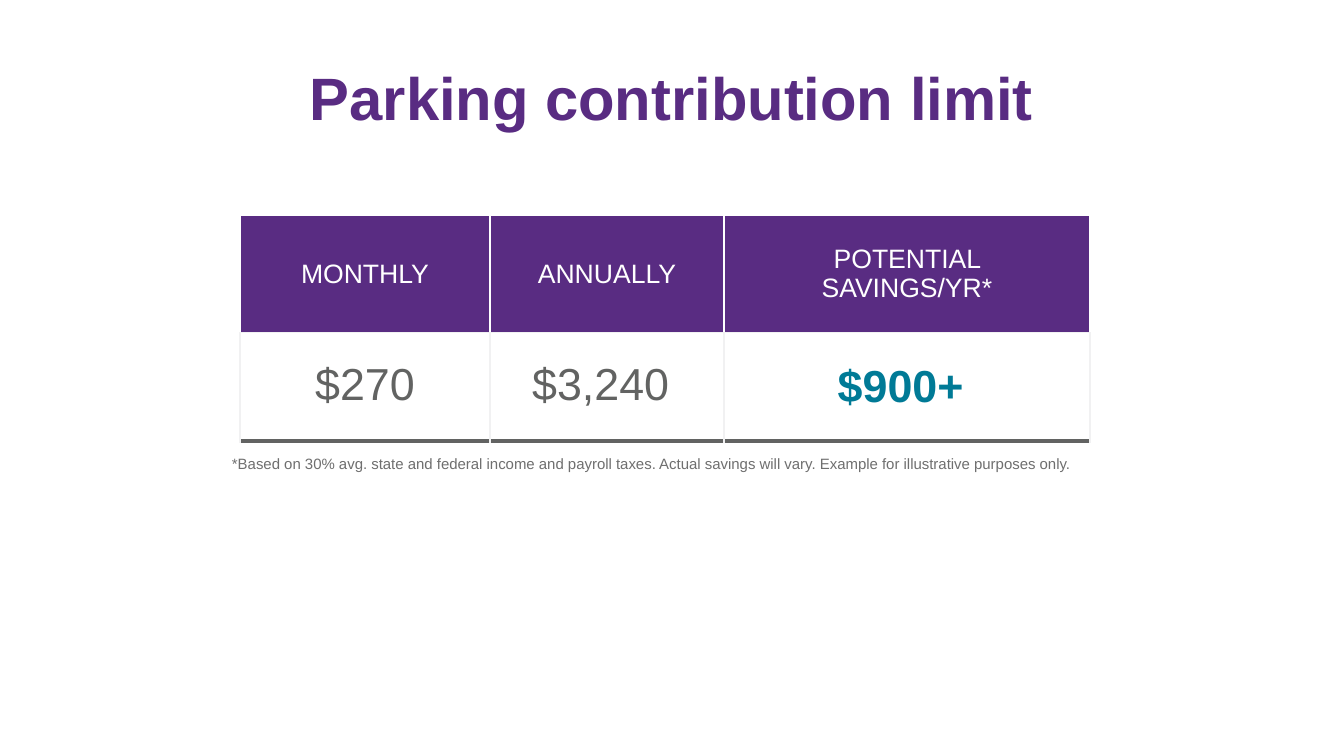
"""Build the parking contribution limit slide."""
import pptx
import pptx.dml.color
import pptx.enum.text
import pptx.oxml
import pptx.oxml.ns
import pptx.util

RGBColor = pptx.dml.color.RGBColor
PURPLE = RGBColor(0x59, 0x2C, 0x82)
WHITE = RGBColor(0xFF, 0xFF, 0xFF)
PALE = RGBColor(0xF1, 0xF1, 0xF2)
GREY = RGBColor(0x62, 0x63, 0x62)
TEAL = RGBColor(0x00, 0x7A, 0x96)
NOTE_GREY = RGBColor(0x6F, 0x6F, 0x6F)

ALIGN = pptx.enum.text.PP_ALIGN
ANCHOR = pptx.enum.text.MSO_ANCHOR

TITLE = "Parking contribution limit"
NOTE = ("*Based on 30% avg. state and federal income and payroll taxes. "
        "Actual savings will vary. Example for illustrative purposes only.")
HEADER = {"size": 19, "color": WHITE}
AMOUNT = {"size": 32, "color": GREY}
SAVING = {"size": 32, "color": TEAL, "bold": True}
ROWS = [
    [("MONTHLY", HEADER, ANCHOR.MIDDLE), ("ANNUALLY", HEADER, ANCHOR.MIDDLE),
     ("POTENTIAL SAVINGS/YR*", HEADER, ANCHOR.MIDDLE)],
    [("$270", AMOUNT, ANCHOR.TOP), ("$3,240 ", AMOUNT, ANCHOR.TOP),
     ("$900+ ", SAVING, ANCHOR.MIDDLE)],
]
BORDERS = [
    {"L": (WHITE, 1), "R": (WHITE, 1), "T": (WHITE, 1), "B": (PALE, 1)},
    {"L": (PALE, 1), "R": (PALE, 1), "T": (PALE, 1), "B": (GREY, 3)},
]
FILLS = [PURPLE, None]
COLUMN_WIDTHS = [250, 234, 366]
ROW_HEIGHTS = [117, 108]
TABLE_LEFT, TABLE_TOP = 240, 215
CELL_MARGIN = 27
SIDES = ("left", "top", "right", "bottom")


def px(length):
    return pptx.util.Emu(round(length * 914400 / 100.8))


def write(frame, text, size, color, bold=False, align=ALIGN.LEFT):
    para = frame.paragraphs[0]
    para.alignment = align
    span = para.add_run()
    span.text = text
    span.font.color.rgb = color
    style = {"name": "Arial", "size": pptx.util.Pt(size), "bold": bold}
    for name, value in style.items():
        setattr(span.font, name, value)


def add_text(page, area, margins, text, **style):
    box = page.shapes.add_textbox(*map(px, area))
    frame = box.text_frame
    frame.word_wrap = True
    frame.vertical_anchor = ANCHOR.TOP
    for side, margin in zip(SIDES, margins):
        setattr(frame, f"margin_{side}", px(margin))
    write(frame, text, **style)


def set_borders(cell, borders):
    properties = cell._tc.get_or_add_tcPr()
    namespace = pptx.oxml.ns.nsdecls("a")
    for position, (side, (color, points)) in enumerate(borders.items()):
        line = pptx.oxml.parse_xml(
            f'<a:ln{side} {namespace} w="{pptx.util.Pt(points)}"><a:solidFill>'
            f'<a:srgbClr val="{color}"/></a:solidFill></a:ln{side}>')
        properties.insert(position, line)


def add_limits(page):
    area = (TABLE_LEFT, TABLE_TOP, sum(COLUMN_WIDTHS), sum(ROW_HEIGHTS))
    table = page.shapes.add_table(
        len(ROWS), len(COLUMN_WIDTHS), *map(px, area)).table
    table.horz_banding = False
    for column, width in zip(table.columns, COLUMN_WIDTHS):
        column.width = px(width)
    for row, height in zip(table.rows, ROW_HEIGHTS):
        row.height = px(height)
    for row, entries, fill, borders in zip(table.rows, ROWS, FILLS, BORDERS):
        for cell, (text, style, anchor) in zip(row.cells, entries):
            cell.vertical_anchor = anchor
            for side in SIDES:
                setattr(cell, f"margin_{side}", px(CELL_MARGIN))
            if fill is None:
                cell.fill.background()
            else:
                cell.fill.solid()
                cell.fill.fore_color.rgb = fill
            set_borders(cell, borders)
            write(cell.text_frame, text, align=ALIGN.CENTER, **style)


def main():
    deck = pptx.Presentation()
    deck.slide_width, deck.slide_height = px(1344), px(756)
    page = deck.slides.add_slide(deck.slide_layouts[6])
    add_text(page, (67, 40, 1210, 84), (13, 21, 13, 0), TITLE,
             size=42.7, color=PURPLE, bold=True, align=ALIGN.CENTER)
    add_limits(page)
    add_text(page, (222, 450, 896, 28), (10, 5, 10, 5), NOTE,
             size=10.7, color=NOTE_GREY)
    deck.save("out.pptx")


if __name__ == "__main__":
    main()
